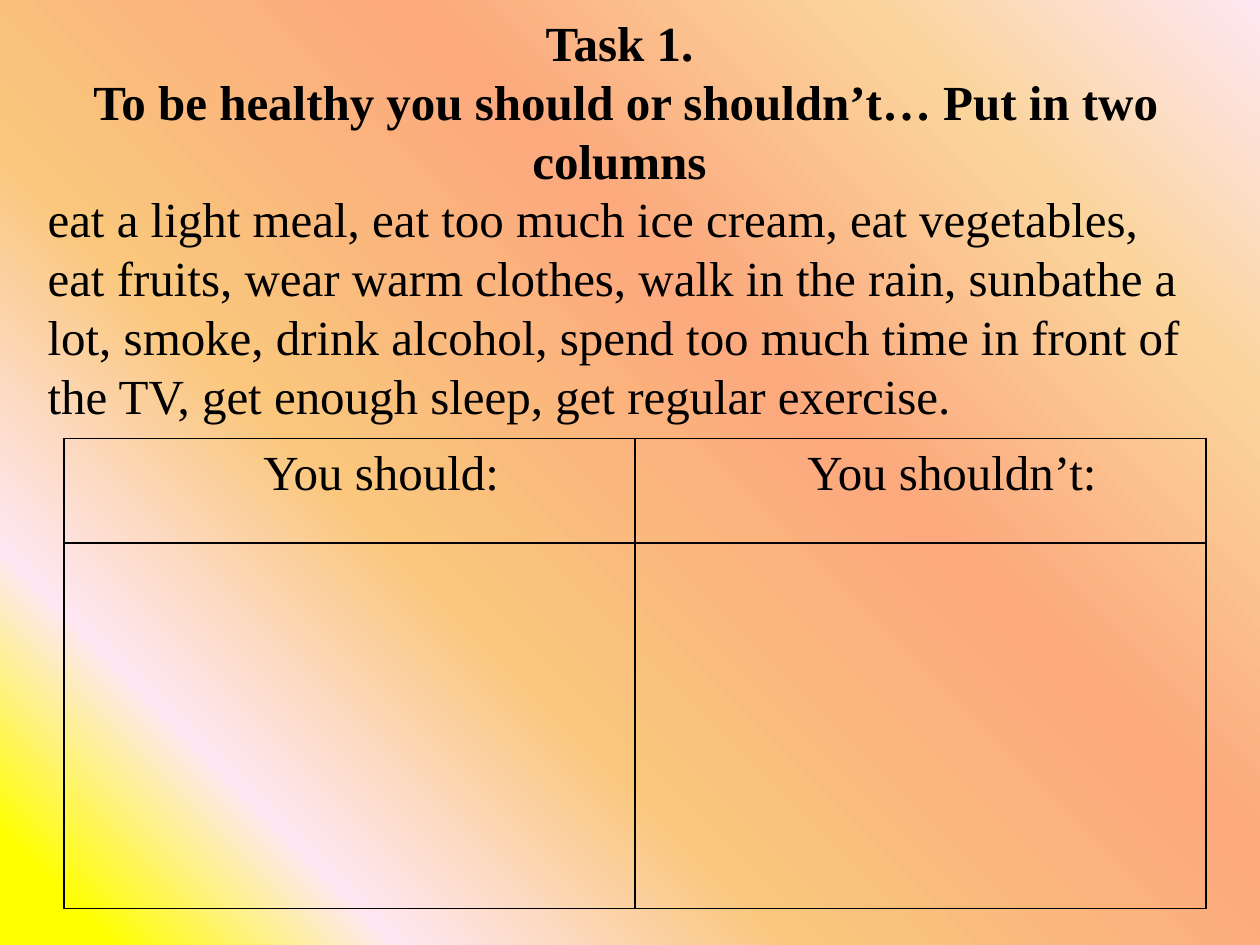
from lxml.etree import SubElement
from pptx import Presentation
from pptx.dml.color import RGBColor
from pptx.enum.text import MSO_ANCHOR, PP_ALIGN
from pptx.oxml.ns import qn
from pptx.util import Inches, Pt

BLACK = RGBColor(0x00, 0x00, 0x00)
YELLOW = RGBColor(0xFF, 0xFF, 0x00)
PINK = RGBColor(0xFE, 0xE7, 0xF2)
AMBER = RGBColor(0xFA, 0xC7, 0x7D)
SALMON = RGBColor(0xFB, 0xA9, 0x7D)
SAND = RGBColor(0xFB, 0xD4, 0x9C)
STOPS = [(5, YELLOW), (18, PINK), (36, AMBER), (61, SALMON), (82, SAND), (100, PINK)]

FONT = "Times New Roman"
TASK = [
    ("Task 1. ", True),
    ("To be healthy you should or shouldn’t… Put in two columns ", True),
    ("eat a light meal, eat too much ice cream, eat vegetables, eat fruits, "
     "wear warm clothes, walk in the rain, sunbathe a lot, smoke, drink alcohol, "
     "spend too much time in front of the TV, get enough sleep, "
     "get regular exercise.", False),
]
HEADERS = ["You should:", "You shouldn’t:"]


def set_background(s):
    fill = s.background.fill
    fill.gradient()
    fill.gradient_angle = 45
    stops = s.element.find(".//" + qn("a:gsLst"))
    for old in list(stops):
        stops.remove(old)
    for percent, color in STOPS:
        gs = SubElement(stops, qn("a:gs"), pos=str(percent * 1000))
        SubElement(gs, qn("a:srgbClr"), val=str(color))


def add_run(p, text, bold=False):
    r = p.add_run()
    r.text = text
    r.font.name = FONT
    r.font.size = Pt(28)
    r.font.bold = bold
    r.font.color.rgb = BLACK


def add_task(s):
    box = s.shapes.add_textbox(Inches(0.28), Inches(0.05), Inches(9.37), Inches(3.7))
    tf = box.text_frame
    tf.word_wrap = True
    tf.vertical_anchor = MSO_ANCHOR.TOP
    for i, (text, is_heading) in enumerate(TASK):
        p = tf.add_paragraph() if i else tf.paragraphs[0]
        p.alignment = PP_ALIGN.CENTER if is_heading else PP_ALIGN.LEFT
        add_run(p, text, is_heading)


def style_cell(cell):
    tcPr = cell._tc.get_or_add_tcPr()
    for side in ("a:lnL", "a:lnR", "a:lnT", "a:lnB"):
        ln = SubElement(tcPr, qn(side), w=str(Pt(1)))
        SubElement(SubElement(ln, qn("a:solidFill")), qn("a:srgbClr"), val=str(BLACK))
    cell.fill.background()


def add_header(cell, text):
    cell.margin_left = cell.margin_right = Inches(0.07)
    cell.margin_top = cell.margin_bottom = 0
    p = cell.text_frame.paragraphs[0]
    p.alignment = PP_ALIGN.CENTER
    p.line_spacing = 1.15
    p._p.get_or_add_pPr().set("marL", str(Inches(0.5)))
    add_run(p, text)


def add_answer_table(s):
    table = s.shapes.add_table(
        2, 2, Inches(0.51), Inches(3.48), Inches(9.06), Inches(3.73)).table
    table.first_row = table.horz_banding = False
    for row, height in zip(table.rows, (0.83, 2.9)):
        row.height = Inches(height)
    for cell in table.iter_cells():
        style_cell(cell)
    for col, text in enumerate(HEADERS):
        add_header(table.cell(0, col), text)


def main():
    prs = Presentation()
    prs.slide_width = Inches(10)
    prs.slide_height = Inches(7.5)
    s = prs.slides.add_slide(prs.slide_layouts[6])
    set_background(s)
    add_task(s)
    add_answer_table(s)
    prs.save("out.pptx")


if __name__ == "__main__":
    main()
